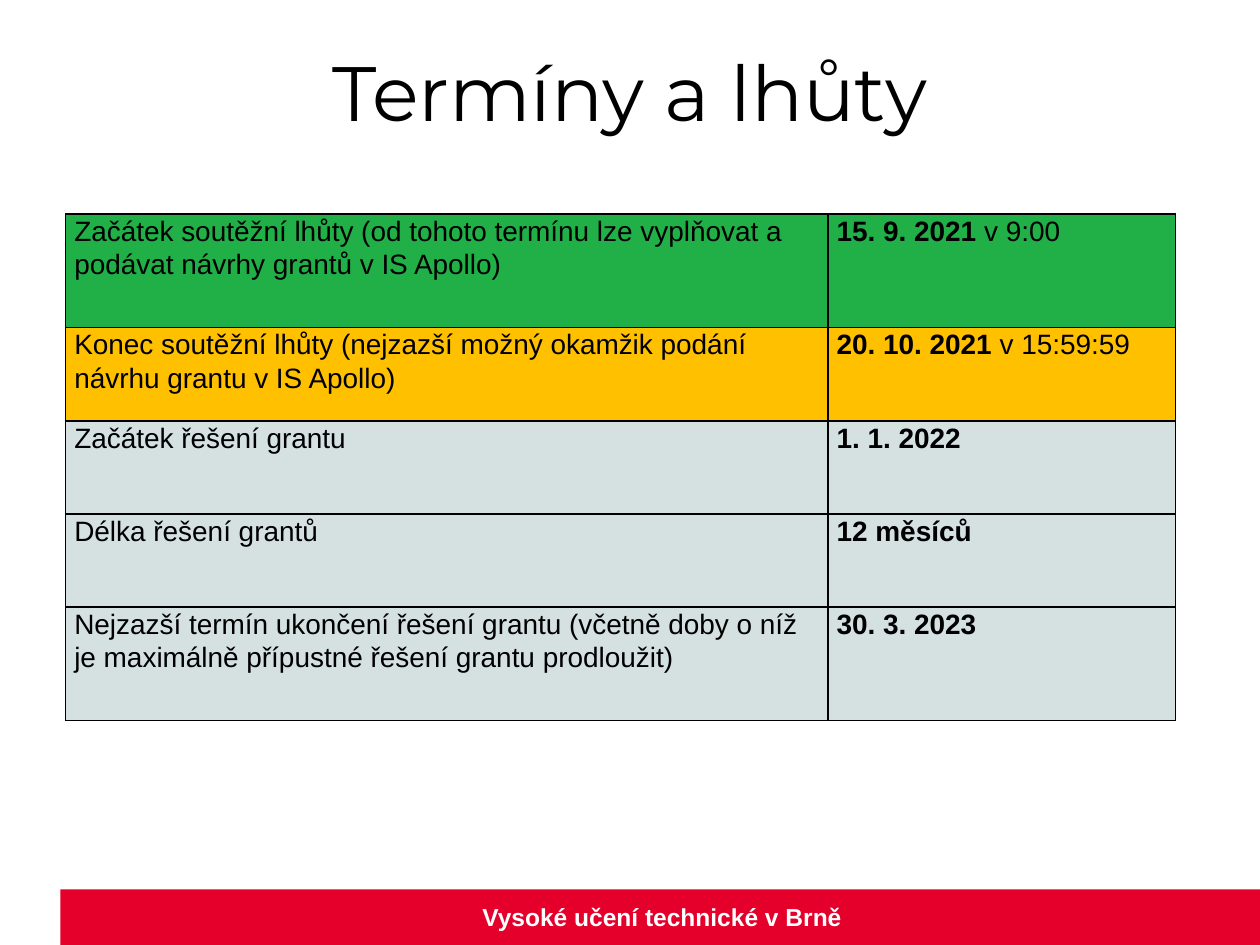
from dataclasses import dataclass

from lxml.etree import SubElement
from pptx import Presentation
from pptx.dml.color import RGBColor
from pptx.enum.shapes import MSO_SHAPE
from pptx.enum.text import MSO_ANCHOR, PP_ALIGN
from pptx.oxml.ns import qn
from pptx.slide import Slide
from pptx.table import _Cell
from pptx.text.text import _Run
from pptx.util import Inches, Pt


@dataclass(frozen=True)
class Theme:
    black: str = "000000"
    white: str = "FFFFFF"
    red: str = "E4002B"
    green: str = "21AF47"
    amber: str = "FFC000"
    grey: str = "D5E1E1"
    heading_font: str = "Montserrat"
    body_font: str = "Arial"
    heading_size: int = 44
    body_size: int = 16
    footer_size: int = 14
    border_width: int = 1


@dataclass(frozen=True)
class Deadline:
    label: str
    date: str
    time: str
    fill: str
    height: float


THEME = Theme()
COLUMN_WIDTHS = (6.05, 2.76)
DEADLINES = (
    Deadline("Začátek soutěžní lhůty (od tohoto termínu lze vyplňovat a podávat návrhy grantů v IS Apollo)",
             "15. 9. 2021 ", "v 9:00", THEME.green, 0.9),
    Deadline("Konec soutěžní lhůty (nejzazší možný okamžik podání návrhu grantu v IS Apollo)",
             "20. 10. 2021 ", "v 15:59:59", THEME.amber, 0.74),
    Deadline("Začátek řešení grantu", "1. 1. 2022", "", THEME.grey, 0.74),
    Deadline("Délka řešení grantů", "12 měsíců", "", THEME.grey, 0.74),
    Deadline("Nejzazší termín ukončení řešení grantu (včetně doby o níž je maximálně přípustné řešení grantu prodloužit)",
             "30. 3. 2023", "", THEME.grey, 0.9),
)


def format_run(run: _Run, size: int, color: str, font: str = THEME.body_font, bold: bool = False) -> None:
    run.font.name = font
    run.font.size = Pt(size)
    run.font.bold = bold
    run.font.color.rgb = RGBColor.from_string(color)


def add_borders(cell: _Cell) -> None:
    properties = cell._tc.get_or_add_tcPr()
    for side in ("a:lnL", "a:lnR", "a:lnT", "a:lnB"):
        border = SubElement(properties, qn(side), w=str(Pt(THEME.border_width)))
        SubElement(SubElement(border, qn("a:solidFill")), qn("a:srgbClr"), val=THEME.black)


def fill_cell(cell: _Cell, fill: str, text: str, bold: bool = False, suffix: str = "") -> None:
    add_borders(cell)
    cell.fill.solid()
    cell.fill.fore_color.rgb = RGBColor.from_string(fill)
    cell.margin_left = cell.margin_right = Inches(0.07)
    cell.margin_top = cell.margin_bottom = 0
    paragraph = cell.text_frame.paragraphs[0]
    paragraph.line_spacing = 1.07
    paragraph.text = text
    format_run(paragraph.runs[0], THEME.body_size, THEME.black, bold=bold)
    if suffix:
        time = paragraph.add_run()
        time.text = suffix
        format_run(time, THEME.body_size, THEME.black)


def add_heading(slide: Slide, text: str) -> None:
    heading = slide.shapes.title
    heading.left, heading.top = Inches(0.5), Inches(0.3)
    heading.width, heading.height = Inches(9), Inches(1.25)
    heading.text_frame.text = text
    heading.text_frame.vertical_anchor = MSO_ANCHOR.TOP
    paragraph = heading.text_frame.paragraphs[0]
    paragraph.alignment = PP_ALIGN.CENTER
    format_run(paragraph.runs[0], THEME.heading_size, THEME.black, THEME.heading_font)


def add_footer(slide: Slide, text: str) -> None:
    band = slide.shapes.add_shape(MSO_SHAPE.RECTANGLE, Inches(0.48), Inches(7.06), Inches(9.52), Inches(0.44))
    band.shadow.inherit = False
    band.fill.solid()
    band.fill.fore_color.rgb = RGBColor.from_string(THEME.red)
    band.line.fill.background()
    university = slide.shapes.add_textbox(Inches(0.51), Inches(7.11), Inches(9.49), Inches(0.34))
    university.text_frame.word_wrap = True
    university.text_frame.text = text
    paragraph = university.text_frame.paragraphs[0]
    paragraph.alignment = PP_ALIGN.CENTER
    format_run(paragraph.runs[0], THEME.footer_size, THEME.white, bold=True)


def add_deadlines(slide: Slide, deadlines: tuple[Deadline, ...]) -> None:
    total_height = sum(deadline.height for deadline in deadlines)
    schedule = slide.shapes.add_table(
        len(deadlines), len(COLUMN_WIDTHS), Inches(0.52), Inches(1.7),
        Inches(sum(COLUMN_WIDTHS)), Inches(total_height),
    ).table
    schedule.first_row = schedule.horz_banding = False
    for column, width in zip(schedule.columns, COLUMN_WIDTHS):
        column.width = Inches(width)
    for row, deadline in zip(schedule.rows, deadlines):
        row.height = Inches(deadline.height)
        label_cell, date_cell = row.cells
        fill_cell(label_cell, deadline.fill, deadline.label)
        fill_cell(date_cell, deadline.fill, deadline.date, bold=True, suffix=deadline.time)


def main() -> None:
    presentation = Presentation()
    presentation.slide_width, presentation.slide_height = Inches(10), Inches(7.5)
    slide = presentation.slides.add_slide(presentation.slide_layouts[5])
    add_footer(slide, "Vysoké učení technické v Brně")
    add_heading(slide, "Termíny a lhůty")
    add_deadlines(slide, DEADLINES)
    presentation.save("out.pptx")


if __name__ == "__main__":
    main()
